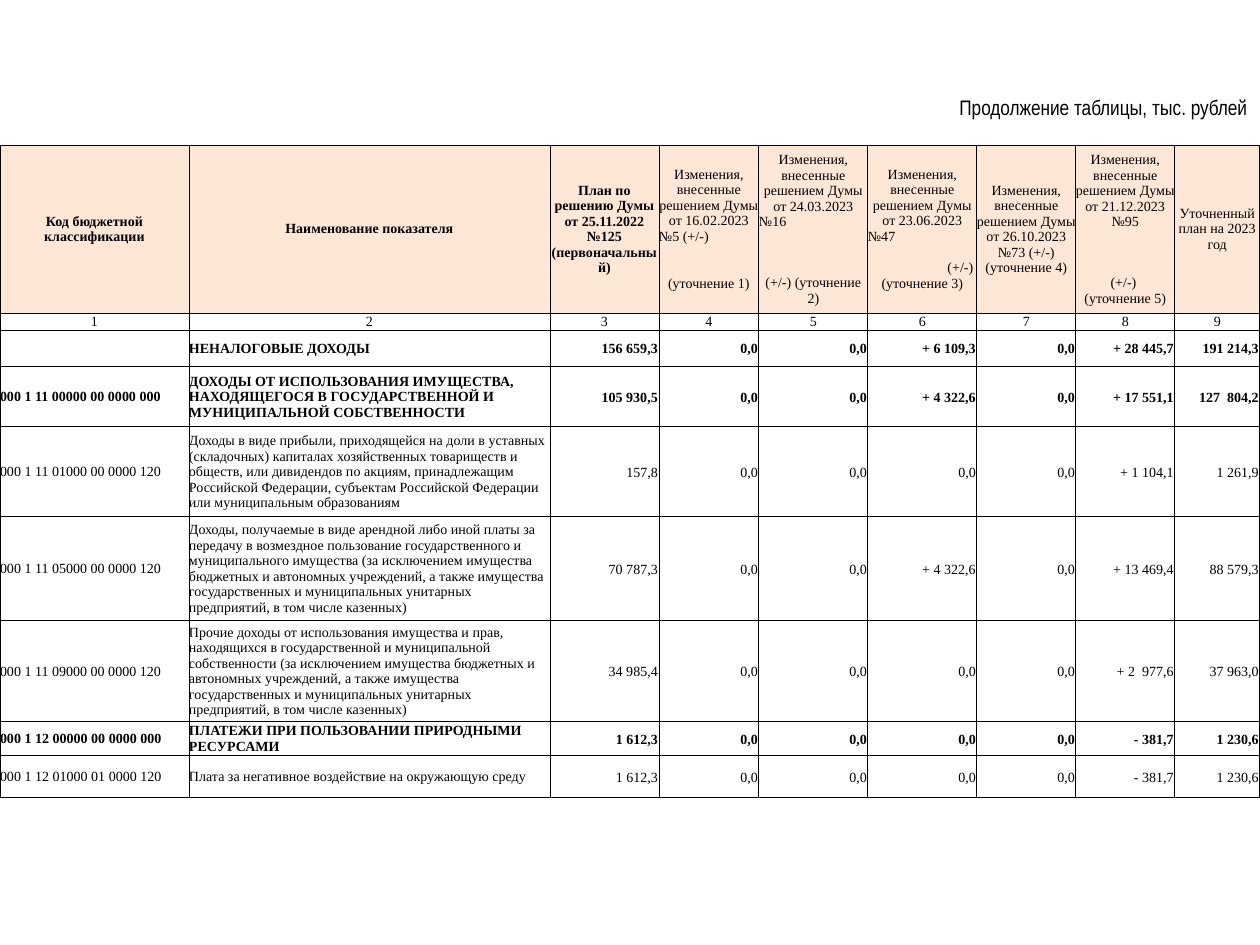
from lxml import etree
from pptx import Presentation
from pptx.dml.color import RGBColor
from pptx.enum.text import MSO_ANCHOR, PP_ALIGN
from pptx.oxml.ns import qn
from pptx.util import Pt

PX = 914400 // 126
LEFT, CENTER, RIGHT = PP_ALIGN.LEFT, PP_ALIGN.CENTER, PP_ALIGN.RIGHT
MIDDLE, BOTTOM = MSO_ANCHOR.MIDDLE, MSO_ANCHOR.BOTTOM
COLORS = {"text": "000000", "border": "000000", "header": "FFE7D7", "body": "FFFFFF"}
BORDER_WIDTH = Pt(0.5)

COLUMN_WIDTHS = [189, 361, 109, 100, 109, 109, 99, 99, 85]
ROW_HEIGHTS = [168, 17, 37, 60, 90, 104, 101, 34, 42]

# Each heading is a list of paragraphs: (text, alignment, space before in points)
CHANGES = "Изменения, внесенные решением Думы от "
HEADINGS = [
    [("Код бюджетной классификации", CENTER, 0)],
    [("Наименование показателя", CENTER, 0)],
    [("План по решению Думы от 25.11.2022 №125 (первоначальный)", CENTER, 0)],
    [(CHANGES + "16.02.2023", CENTER, 0), ("№5 (+/-)", LEFT, 0),
     ("(уточнение 1)", CENTER, 18)],
    [(CHANGES + "24.03.2023", CENTER, 0), ("№16", LEFT, 0),
     ("(+/-) (уточнение 2)", CENTER, 26)],
    [(CHANGES + "23.06.2023", CENTER, 0), ("№47", LEFT, 0),
     ("(+/-) ", RIGHT, 9), ("(уточнение 3)", CENTER, 0)],
    [(CHANGES + "26.10.2023 №73 (+/-)", CENTER, 0), ("(уточнение 4)", CENTER, 0)],
    [(CHANGES + "21.12.2023 №95", CENTER, 0), ("(+/-) ", CENTER, 26),
     ("(уточнение 5)", CENTER, 0)],
    [("Уточненный план на 2023 год", CENTER, 0)],
]
BOLD_HEADINGS = 3

# Bold flag, code, name, then the seven amounts
INCOME_ROWS = [
    (True, "", "НЕНАЛОГОВЫЕ ДОХОДЫ",
     "156 659,3", "0,0", "0,0", "+ 6 109,3", "0,0", "+ 28 445,7", "191 214,3"),
    (True, "000 1 11 00000 00 0000 000",
     "ДОХОДЫ ОТ ИСПОЛЬЗОВАНИЯ ИМУЩЕСТВА, НАХОДЯЩЕГОСЯ В ГОСУДАРСТВЕННОЙ И "
     "МУНИЦИПАЛЬНОЙ СОБСТВЕННОСТИ",
     "105 930,5", "0,0", "0,0", "+ 4 322,6", "0,0", "+ 17 551,1", "127  804,2"),
    (False, "000 1 11 01000 00 0000 120",
     "Доходы в виде прибыли, приходящейся на доли в уставных (складочных) капиталах "
     "хозяйственных товариществ и обществ, или дивидендов по акциям, принадлежащим "
     "Российской Федерации, субъектам Российской Федерации или муниципальным "
     "образованиям",
     "157,8", "0,0", "0,0", "0,0", "0,0", "+ 1 104,1", "1 261,9"),
    (False, "000 1 11 05000 00 0000 120",
     "Доходы, получаемые в виде арендной либо иной платы за передачу в возмездное "
     "пользование государственного и муниципального имущества (за исключением "
     "имущества бюджетных и автономных учреждений, а также имущества государственных "
     "и муниципальных унитарных предприятий, в том числе казенных)",
     "70 787,3", "0,0", "0,0", "+ 4 322,6", "0,0", "+ 13 469,4", "88 579,3"),
    (False, "000 1 11 09000 00 0000 120",
     "Прочие доходы от использования имущества и прав, находящихся в государственной "
     "и муниципальной собственности (за исключением имущества бюджетных и автономных "
     "учреждений, а также имущества государственных и муниципальных унитарных "
     "предприятий, в том числе казенных)",
     "34 985,4", "0,0", "0,0", "0,0", "0,0", "+ 2  977,6", "37 963,0"),
    (True, "000 1 12 00000 00 0000 000",
     "ПЛАТЕЖИ ПРИ ПОЛЬЗОВАНИИ ПРИРОДНЫМИ РЕСУРСАМИ",
     "1 612,3", "0,0", "0,0", "0,0", "0,0", "- 381,7", "1 230,6"),
    (False, "000 1 12 01000 01 0000 120",
     "Плата за негативное воздействие на окружающую среду",
     "1 612,3", "0,0", "0,0", "0,0", "0,0", "- 381,7", "1 230,6"),
]


def write(frame, paragraphs, *, font="Times New Roman", size=8, bold=False):
    """Fill a text frame with (text, alignment, space before) paragraphs."""
    frame.word_wrap = True
    for index, (text, align, space) in enumerate(paragraphs):
        paragraph = frame.add_paragraph() if index else frame.paragraphs[0]
        paragraph.alignment = align
        paragraph.space_before = Pt(space)
        if not text:
            # An empty cell needs its own text size, or its row grows
            etree.SubElement(paragraph._p, qn("a:endParaRPr"), sz=str(size * 100))
            continue
        run = paragraph.add_run()
        run.text = text
        run.font.name = font
        run.font.size = Pt(size)
        run.font.bold = bold
        run.font.color.rgb = RGBColor.from_string(COLORS["text"])


def add_borders(cell):
    properties = cell._tc.get_or_add_tcPr()
    for side in ("lnL", "lnR", "lnT", "lnB"):
        line = etree.SubElement(properties, qn(f"a:{side}"), w=str(BORDER_WIDTH))
        fill = etree.SubElement(line, qn("a:solidFill"))
        etree.SubElement(fill, qn("a:srgbClr"), val=COLORS["border"])


def fill_cell(cell, paragraphs, *, fill="body", bold=False, inset=0):
    add_borders(cell)
    cell.fill.solid()
    cell.fill.fore_color.rgb = RGBColor.from_string(COLORS[fill])
    cell.vertical_anchor = MIDDLE
    cell.margin_left = cell.margin_right = cell.margin_top = inset * PX
    cell.margin_bottom = 0
    write(cell.text_frame, paragraphs, bold=bold)


def add_title(slide, left, top, width, height):
    title = slide.shapes.add_textbox(left * PX, top * PX, width * PX, height * PX)
    title.text_frame.vertical_anchor = BOTTOM
    write(title.text_frame, [("Продолжение таблицы, тыс. рублей", RIGHT, 0)],
          font="Arial Narrow", size=12)


def add_income_table(slide, left, top):
    table = slide.shapes.add_table(
        len(ROW_HEIGHTS), len(COLUMN_WIDTHS), left * PX, top * PX,
        sum(COLUMN_WIDTHS) * PX, sum(ROW_HEIGHTS) * PX).table
    table.first_row = table.horz_banding = False
    for column, width in zip(table.columns, COLUMN_WIDTHS):
        column.width = width * PX
    for row, height in zip(table.rows, ROW_HEIGHTS):
        row.height = height * PX

    for index, heading in enumerate(HEADINGS):
        fill_cell(table.cell(0, index), heading, fill="header",
                  bold=index < BOLD_HEADINGS)
        fill_cell(table.cell(1, index), [(str(index + 1), CENTER, 0)])
    for row_index, (bold, *values) in enumerate(INCOME_ROWS, start=2):
        for index, value in enumerate(values):
            is_amount = index >= 2
            fill_cell(table.cell(row_index, index),
                      [(value, RIGHT if is_amount else LEFT, 0)],
                      bold=bold, inset=1 if is_amount else 0)


def main():
    presentation = Presentation()
    presentation.slide_width = 1260 * PX
    presentation.slide_height = 945 * PX
    slide = presentation.slides.add_slide(presentation.slide_layouts[6])
    add_title(slide, 828, 45, 432, 81)
    add_income_table(slide, 0, 145)
    presentation.save("out.pptx")


if __name__ == "__main__":
    main()
